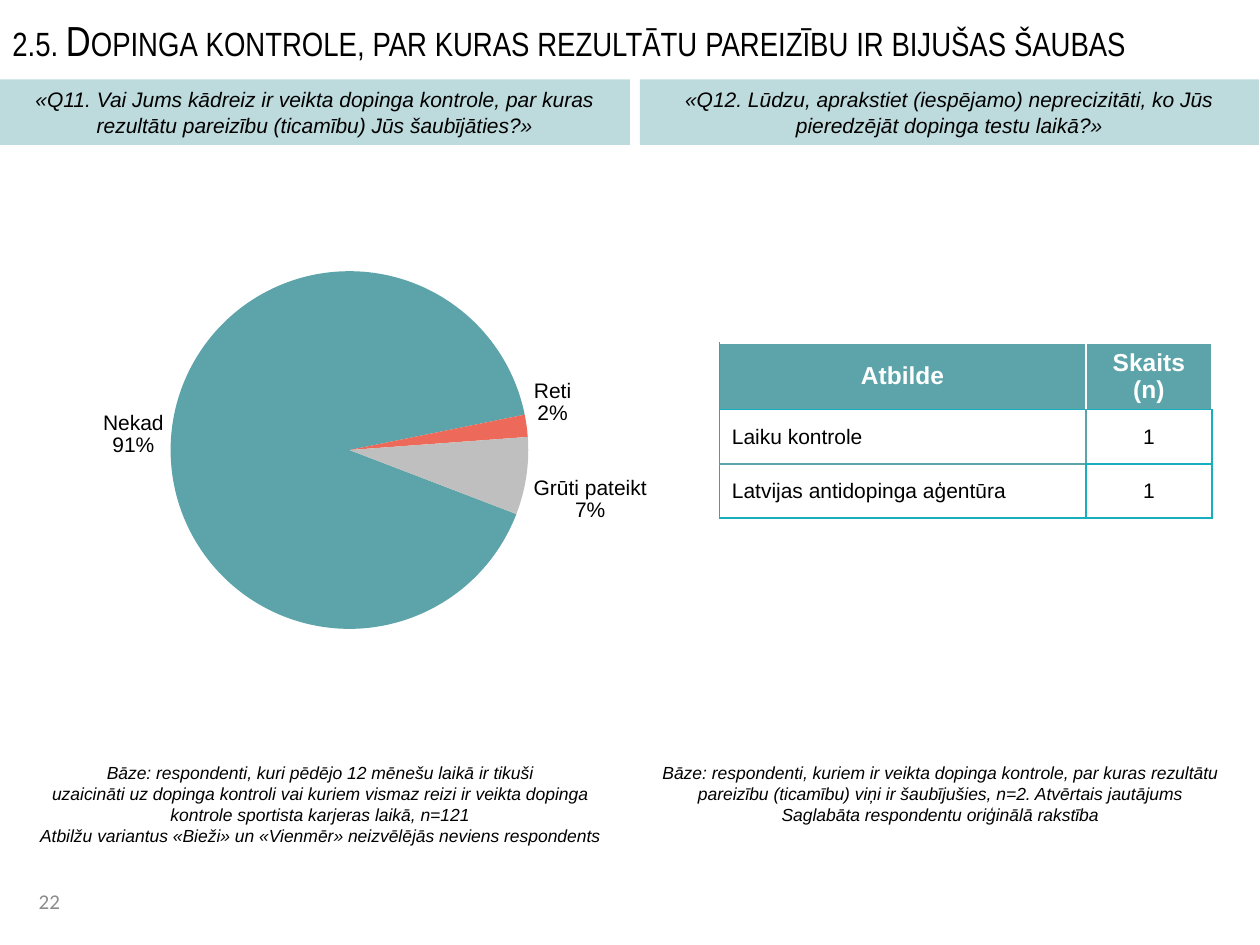
"""Builds the slide on doubted doping controls: a pie of answers and a table of comments."""
from lxml import etree
from pptx import Presentation, util as u
from pptx.chart import data
from pptx.dml import color
from pptx.enum import chart as ch, shapes, text
from pptx.oxml import ns

COLORS = {"black": "000000", "white": "FFFFFF", "teal": "5CA4A9", "cyan": "17AFBF",
          "red": "ED6A5A", "peach": "F9BFA5", "silver": "BFBFBF", "gray": "8C8C8C"}

TITLE = "2.5. Dopinga kontrole, par kuras rezultātu pareizību ir bijušas šaubas"
PAGE = "22"
QUESTIONS = [
    (0, 12.7, "«Q11. Vai Jums kādreiz ir veikta dopinga kontrole, par kuras rezultātu "
              "pareizību (ticamību) Jūs šaubījāties?»"),
    (12.9, 12.48, "«Q12. Lūdzu, aprakstiet (iespējamo) neprecizitāti, ko Jūs "
                  "pieredzējāt dopinga testu laikā?»"),
]
BASES = [
    (0, 12.9, 2, ["Bāze: respondenti, kuri pēdējo 12 mēnešu laikā ir tikuši",
                  "uzaicināti uz dopinga kontroli vai kuriem vismaz reizi ir veikta dopinga",
                  "kontrole sportista karjeras laikā, n=121",
                  "Atbilžu variantus «Bieži» un «Vienmēr» neizvēlējās neviens respondents"]),
    (12.5, 12.9, 1.58, ["Bāze: respondenti, kuriem ir veikta dopinga kontrole, par kuras rezultātu",
                        "pareizību (ticamību) viņi ir šaubījušies, n=2. Atvērtais jautājums",
                        "Saglabāta respondentu oriģinālā rakstība"]),
]
FREQUENCIES = [("Nekad", 91, "teal"), ("Reti", 2, "red"), ("Bieži", 0, "peach"),
               ("Vienmēr", 0, "red"), ("Grūti pateikt", 7, "silver")]
ANSWERS = [("Atbilde", "Skaits (n)"), ("Laiku kontrole", "1"),
           ("Latvijas antidopinga aģentūra", "1")]
COLUMN_WIDTHS = [7.39, 2.54]
ROW_HEIGHTS = [1.35, 1.09, 1.09]
PLOT_AREA = {"x": 0.215, "y": 0.142, "w": 0.494, "h": 0.715}
BORDERS = {
    (0, 0): ("cyan", "white", "white", "cyan"),
    (0, 1): ("white", "white", "white", "cyan"),
    (1, 0): ("cyan", "cyan", "teal", "teal"),
    (1, 1): ("teal", "cyan", "cyan", "cyan"),
    (2, 0): ("cyan", "teal", "cyan", "cyan"),
    (2, 1): ("cyan",) * 4,
}


def rgb(name):
    return color.RGBColor.from_string(COLORS[name])


def add_xml(parent, tag, **attributes):
    return etree.SubElement(parent, ns.qn(tag), attributes)


def write(frame, lines, size, font="Arial", ink="black", align=text.PP_ALIGN.CENTER,
          bold=False, italic=False):
    frame.word_wrap = True
    frame.vertical_anchor = text.MSO_ANCHOR.MIDDLE
    for index, line in enumerate(lines):
        paragraph = frame.add_paragraph() if index else frame.paragraphs[0]
        paragraph.alignment = align
        run = paragraph.add_run()
        run.text = line
        run.font.size, run.font.name = u.Pt(size), font
        run.font.bold, run.font.italic = bold, italic
        run.font.color.rgb = rgb(ink)


def add_note(slide, left, top, width, height, lines, size, **style):
    note = slide.shapes.add_textbox(u.Cm(left), u.Cm(top), u.Cm(width), u.Cm(height))
    write(note.text_frame, lines, size, **style)
    return note


def add_question(slide, left, width, wording):
    band = slide.shapes.add_shape(shapes.MSO_SHAPE.RECTANGLE, u.Cm(left), u.Cm(1.6),
                                  u.Cm(width), u.Cm(1.32))
    band.shadow.inherit = False
    band.fill.solid()
    band.fill.fore_color.rgb = rgb("teal")
    add_xml(band.fill._xPr.find(".//" + ns.qn("a:srgbClr")), "a:alpha", val="40000")
    band.line.fill.background()
    write(band.text_frame, [wording], 12, italic=True)


def add_pie(slide):
    frequencies = data.CategoryChartData()
    frequencies.categories = [name for name, _, _ in FREQUENCIES]
    frequencies.add_series("Series 1", [share for _, share, _ in FREQUENCIES])
    pie = slide.shapes.add_chart(ch.XL_CHART_TYPE.PIE, u.Cm(0.3), u.Cm(3.53), u.Cm(14.6),
                                 u.Cm(11.1), frequencies).chart
    pie.has_legend = pie.has_title = False
    pie.font.size, pie.font.name = u.Pt(10), "Arial"
    pie.font.color.rgb = rgb("black")
    plot = pie.plots[0]
    plot.vary_by_categories = True
    answers = plot.series[0]

    labels = answers.data_labels
    labels.show_value = False
    labels.show_category_name = labels.show_percentage = True
    labels.number_format, labels.number_format_is_linked = "0%", False
    labels.position = ch.XL_LABEL_POSITION.OUTSIDE_END
    labels.font.size, labels.font.name = u.Pt(12), "Arial"
    labels.font.color.rgb = rgb("black")
    label_xml = labels._element
    separator = etree.Element(ns.qn("c:separator"))
    separator.text = "\n"
    label_xml.find(ns.qn("c:showBubbleSize")).addnext(separator)

    hidden = 0
    for index, (_, share, hue) in enumerate(FREQUENCIES):
        slice_fill = answers.points[index].format.fill
        slice_fill.solid()
        slice_fill.fore_color.rgb = rgb(hue)
        if not share:
            omitted = etree.Element(ns.qn("c:dLbl"))
            add_xml(omitted, "c:idx", val=str(index))
            add_xml(omitted, "c:delete", val="1")
            label_xml.insert(hidden, omitted)
            hidden += 1

    add_xml(plot._element, "c:firstSliceAng", val="111")
    area = plot._element.getparent()
    for old in area.findall(ns.qn("c:layout")):
        area.remove(old)
    layout = etree.Element(ns.qn("c:layout"))
    manual = add_xml(layout, "c:manualLayout")
    add_xml(manual, "c:layoutTarget", val="inner")
    for axis in "xy":
        add_xml(manual, f"c:{axis}Mode", val="edge")
    for side, value in PLOT_AREA.items():
        add_xml(manual, f"c:{side}", val=str(value))
    area.insert(0, layout)


def set_borders(cell, hues):
    properties = cell._tc.get_or_add_tcPr()
    for index, (side, hue) in enumerate(zip("LTRB", hues)):
        edge = etree.Element(ns.qn(f"a:ln{side}"), {"w": "12700"})
        add_xml(add_xml(edge, "a:solidFill"), "a:srgbClr", val=COLORS[hue])
        properties.insert(index, edge)


def add_answers(slide):
    table = slide.shapes.add_table(len(ANSWERS), len(COLUMN_WIDTHS), u.Cm(14.5), u.Cm(6.91),
                                   u.Cm(sum(COLUMN_WIDTHS)), u.Cm(sum(ROW_HEIGHTS))).table
    for column, width in zip(table.columns, COLUMN_WIDTHS):
        column.width = u.Cm(width)
    for row, height in zip(table.rows, ROW_HEIGHTS):
        row.height = u.Cm(height)
    for (row, column), hues in BORDERS.items():
        cell = table.cell(row, column)
        header = row == 0
        cell.margin_top = cell.margin_bottom = u.Cm(0.05)
        cell.fill.solid()
        cell.fill.fore_color.rgb = rgb("teal" if header else "white")
        centred = header or column == 1
        write(cell.text_frame, [ANSWERS[row][column]], 14 if header else 12, bold=header,
              ink="white" if header else "black",
              align=text.PP_ALIGN.CENTER if centred else text.PP_ALIGN.LEFT)
        cell.vertical_anchor = text.MSO_ANCHOR.MIDDLE
        set_borders(cell, hues)


def main():
    deck = Presentation()
    deck.slide_width, deck.slide_height = u.Cm(25.4), u.Cm(19.05)
    slide = deck.slides.add_slide(deck.slide_layouts[6])
    left = text.PP_ALIGN.LEFT
    add_note(slide, 0.53, 17.65, 2.7, 1.02, [PAGE], 12, font="Calibri", ink="gray", align=left)
    title = add_note(slide, 0, 0, 25.4, 1.6, [TITLE], 24, font="Arial Narrow", align=left)
    title.text_frame.paragraphs[0].runs[0].font._element.set("cap", "small")
    for start, width, wording in QUESTIONS:
        add_question(slide, start, width, wording)
    add_pie(slide)
    add_answers(slide)
    for start, width, height, lines in BASES:
        add_note(slide, start, 15.21, width, height, lines, 10, italic=True)
    deck.save("out.pptx")


if __name__ == "__main__":
    main()
